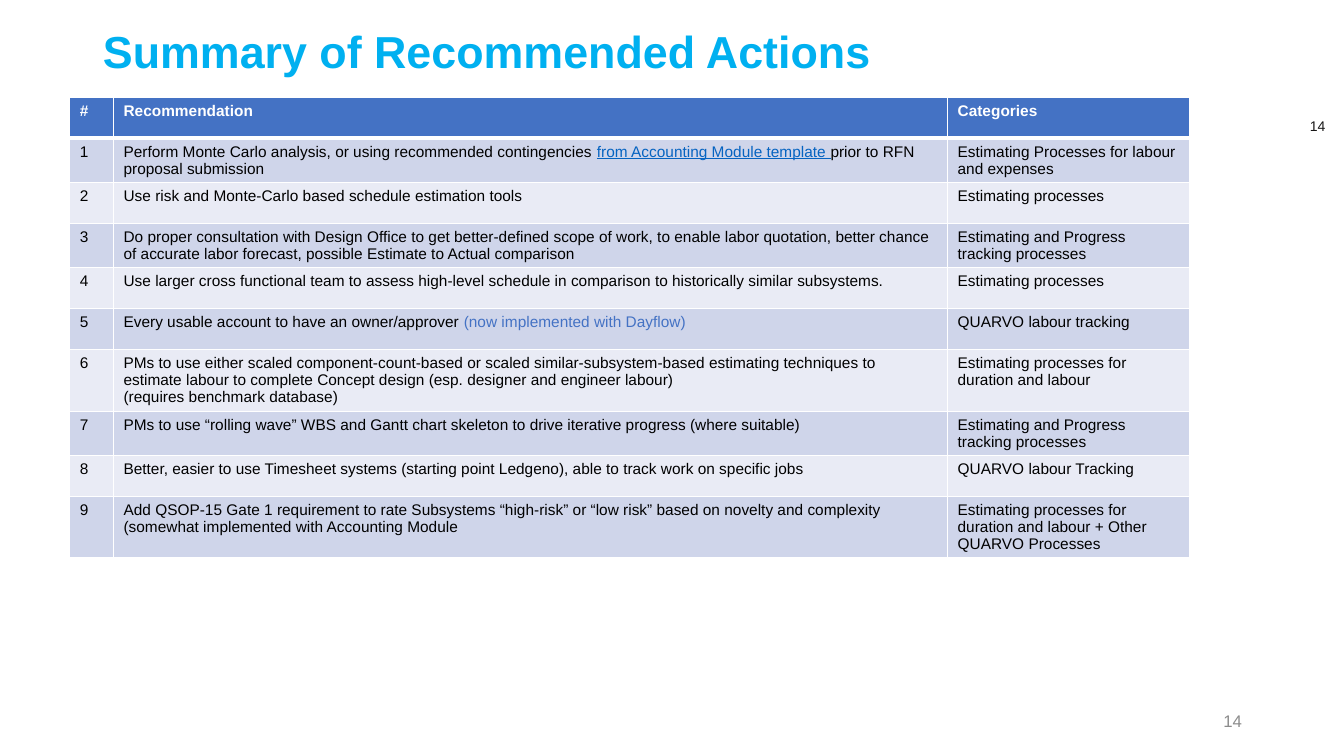
import pptx
import pptx.util
import pptx.dml.color
import pptx.enum.text
import pptx.oxml
import pptx.oxml.ns

Cm = pptx.util.Cm
Pt = pptx.util.Pt
RGBColor = pptx.dml.color.RGBColor

WHITE = RGBColor(0xFF, 0xFF, 0xFF)
BLACK = RGBColor(0x00, 0x00, 0x00)
CYAN = RGBColor(0x00, 0xB0, 0xF0)
BLUE = RGBColor(0x44, 0x72, 0xC4)
LINK_BLUE = RGBColor(0x05, 0x63, 0xC1)
BAND_DARK = RGBColor(0xCF, 0xD5, 0xEA)
BAND_LIGHT = RGBColor(0xE9, 0xEB, 0xF5)
INK = RGBColor(0x18, 0x17, 0x17)
GREY = RGBColor(0x8C, 0x8C, 0x8C)

LINK = "from Accounting Module template "
STATUS = "(now implemented with Dayflow)"

ACTIONS = [
    (["Perform Monte Carlo analysis, or using recommended contingencies ", LINK,
      "prior to RFN proposal submission"],
     "Estimating Processes for labour and expenses"),
    (["Use risk and Monte-Carlo based schedule estimation tools"],
     "Estimating processes"),
    (["Do proper consultation with Design Office to get better-defined scope of work, "
      "to enable labor quotation, better chance of accurate labor forecast, "
      "possible Estimate to Actual comparison"],
     "Estimating and Progress tracking processes"),
    (["Use larger cross functional team to assess high-level schedule in comparison "
      "to historically similar subsystems."],
     "Estimating processes"),
    (["Every usable account to have an owner/approver ", STATUS],
     "QUARVO labour tracking"),
    (["PMs to use either scaled component-count-based or scaled similar-subsystem-based "
      "estimating techniques to estimate labour to complete Concept design "
      "(esp. designer and engineer labour)\n(requires benchmark database)"],
     "Estimating processes for duration and labour"),
    (["PMs to use “rolling wave” WBS and Gantt chart skeleton to drive iterative "
      "progress (where suitable)"],
     "Estimating and Progress tracking processes"),
    (["Better, easier to use Timesheet systems (starting point Ledgeno), able to track "
      "work on specific jobs"],
     "QUARVO labour Tracking"),
    (["Add QSOP-15 Gate 1 requirement to rate Subsystems “high-risk” or “low risk” based "
      "on novelty and complexity (somewhat implemented with Accounting Module"],
     "Estimating processes for duration and labour + Other QUARVO Processes"),
]


def style_paragraph(paragraph, size, colour, bold=False):
    paragraph.font.name = "Arial"
    paragraph.font.size = Pt(size)
    paragraph.font.bold = bold
    paragraph.font.color.rgb = colour


def add_border(cell, side, points):
    namespace = pptx.oxml.ns.nsdecls("a")
    line = pptx.oxml.parse_xml(
        f'<a:{side} {namespace} w="{Pt(points)}"><a:solidFill>'
        f'<a:srgbClr val="{WHITE}"/></a:solidFill></a:{side}>')
    cell._tc.get_or_add_tcPr().append(line)


presentation = pptx.Presentation()
presentation.slide_width = Cm(33.87)
presentation.slide_height = Cm(19.05)
slide = presentation.slides.add_slide(presentation.slide_layouts[5])

title = slide.shapes.title
title.left, title.top, title.width, title.height = Cm(2.34), Cm(0.64), Cm(29.2), Cm(1.45)
title.text_frame.text = "Summary of Recommended Actions"
title.text_frame.vertical_anchor = pptx.enum.text.MSO_ANCHOR.MIDDLE
title_paragraph = title.text_frame.paragraphs[0]
title_paragraph.alignment = pptx.enum.text.PP_ALIGN.LEFT
title_paragraph.line_spacing = 0.9
style_paragraph(title_paragraph, 32, CYAN, True)

rows = [("#", ["Recommendation"], "Categories")]
rows += [(str(number), *action) for number, action in enumerate(ACTIONS, 1)]
column_widths = [Cm(1.1), Cm(21.02), Cm(6.1)]
row_height = Cm(1.03)
table = slide.shapes.add_table(
    len(rows), len(column_widths), Cm(1.76), Cm(2.45),
    sum(column_widths), row_height * len(rows)).table
for column, width in zip(table.columns, column_widths):
    column.width = width

for row_index, (number, recommendation, category) in enumerate(rows):
    is_header = row_index == 0
    band = BLUE if is_header else BAND_DARK if row_index % 2 else BAND_LIGHT
    table.rows[row_index].height = row_height
    for column_index, pieces in enumerate([[number], recommendation, [category]]):
        cell = table.cell(row_index, column_index)
        cell.text_frame.text = pieces[0]
        for piece in pieces[1:]:
            run = cell.text_frame.paragraphs[0].add_run()
            run.text = piece
            if piece == LINK:
                run.font.color.rgb = LINK_BLUE
                run.font.underline = True
            elif piece == STATUS:
                run.font.color.rgb = BLUE
        for paragraph in cell.text_frame.paragraphs:
            style_paragraph(paragraph, 11, WHITE if is_header else BLACK, is_header)
        for side in ["lnL", "lnR", "lnT", "lnB"]:
            heavy = (is_header and side == "lnB") or (row_index == 1 and side == "lnT")
            add_border(cell, side, 3 if heavy else 1)
        cell.fill.solid()
        cell.fill.fore_color.rgb = band

page_numbers = [
    (Cm(31.75), Cm(2.72), Cm(1.78), Cm(0.89), Cm(0.13), 10, INK),
    (Cm(23.93), Cm(17.65), Cm(7.62), Cm(1.02), Cm(0.25), 12, GREY),
]
for left, top, width, height, right_margin, size, colour in page_numbers:
    text_frame = slide.shapes.add_textbox(left, top, width, height).text_frame
    text_frame.word_wrap = True
    text_frame.margin_right = right_margin
    text_frame.vertical_anchor = pptx.enum.text.MSO_ANCHOR.MIDDLE
    text_frame.text = "14"
    text_frame.paragraphs[0].alignment = pptx.enum.text.PP_ALIGN.RIGHT
    style_paragraph(text_frame.paragraphs[0], size, colour)

presentation.save("out.pptx")
